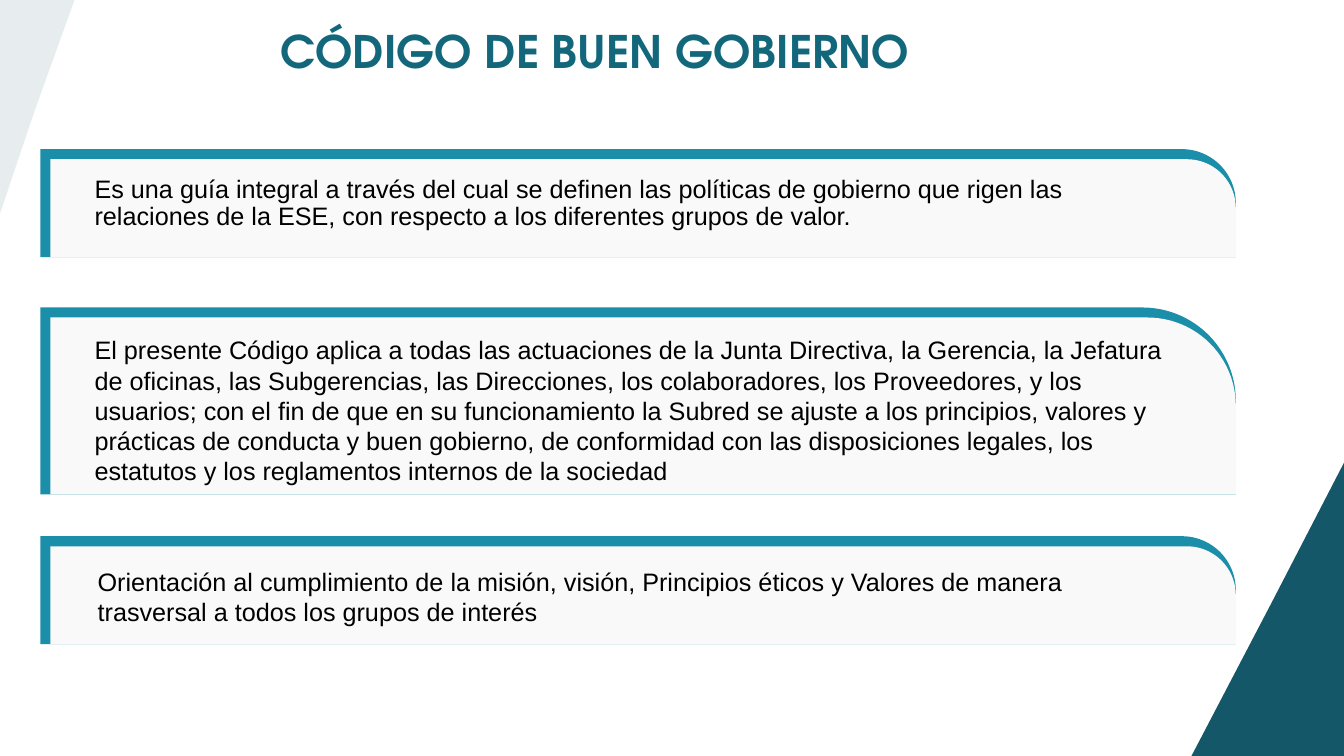
from lxml.etree import SubElement
from pptx import Presentation
from pptx.dml.color import RGBColor
from pptx.enum.shapes import MSO_SHAPE
from pptx.enum.text import MSO_ANCHOR, MSO_AUTO_SIZE, PP_ALIGN
from pptx.oxml.ns import qn
from pptx.util import Inches, Pt

COLORS = {
    "title": "13677B",
    "accent": "1B8EA9",
    "panel": "F9F9F9",
    "wedge": "145768",
    "text": "000000",
}

GUIDE = (
    "Es una guía integral a través del cual se definen las políticas de gobierno "
    "que rigen las relaciones de la ESE, con respecto a los diferentes grupos de valor."
)
SCOPE = (
    "El presente Código aplica a todas las actuaciones de la Junta Directiva, la Gerencia, "
    "la Jefatura de oficinas, las Subgerencias, las Direcciones, los colaboradores, "
    "los Proveedores, y los usuarios; con el fin de que en su funcionamiento la Subred "
    "se ajuste a los principios, valores y prácticas de conducta y buen gobierno, "
    "de conformidad con las disposiciones legales, los estatutos y los reglamentos "
    "internos de la sociedad"
)
ORIENTATION = (
    "Orientación al cumplimiento de la misión, visión, Principios éticos y Valores "
    "de manera trasversal a todos los grupos de interés"
)


class SlideBuilder:
    heading_font = "TeX Gyre Adventor"
    body_font = "Arial"
    card_left, card_width = 3, 88.95
    border_columns, border_rows = 0.75, 1.33

    def __init__(self, deck):
        self.column = deck.slide_width / 100
        self.row = deck.slide_height / 100
        self.page = deck.slides.add_slide(deck.slide_layouts[5])

    def area(self, left, top, width, height):
        return (
            round(left * self.column),
            round(top * self.row),
            round(width * self.column),
            round(height * self.row),
        )

    def paint(self, shape, color):
        shape.shadow.inherit = False
        shape.fill.solid()
        shape.fill.fore_color.rgb = RGBColor.from_string(COLORS[color])
        shape.line.fill.background()

    def wedge(self, points, opacity=100):
        corners = [(x * self.column, y * self.row) for x, y in points]
        builder = self.page.shapes.build_freeform(*corners[0])
        builder.add_line_segments(corners[1:], close=True)
        shape = builder.convert_to_shape()
        self.paint(shape, "wedge")
        if opacity < 100:
            color = shape._element.spPr.find(qn("a:solidFill"))[0]
            SubElement(color, qn("a:alpha"), val=str(opacity * 1000))

    def panel(self, area, color):
        shape = self.page.shapes.add_shape(MSO_SHAPE.ROUND_1_RECTANGLE, *self.area(*area))
        shape.adjustments[0] = 0.5
        self.paint(shape, color)

    def card(self, top, height):
        self.panel((self.card_left, top, self.card_width, height), "accent")
        self.panel(
            (
                self.card_left + self.border_columns,
                top + self.border_rows,
                self.card_width - self.border_columns,
                height - self.border_rows,
            ),
            "panel",
        )

    def set_text(self, box, text, font, size, color, bold=False, spacing=1.0):
        frame = box.text_frame
        frame.text = text
        frame.word_wrap = True
        frame.auto_size = MSO_AUTO_SIZE.NONE
        frame.vertical_anchor = MSO_ANCHOR.TOP
        para = frame.paragraphs[0]
        para.alignment = PP_ALIGN.LEFT
        para.line_spacing = spacing
        para.space_before = Pt(0)
        for span in para.runs:
            span.font.name = font
            span.font.size = Pt(size)
            span.font.bold = bold
            span.font.color.rgb = RGBColor.from_string(COLORS[color])

    def title(self, area, text):
        box = self.page.shapes.title
        box.left, box.top, box.width, box.height = self.area(*area)
        self.set_text(box, text, self.heading_font, 32, "title", bold=True)

    def body(self, area, text, spacing):
        box = self.page.shapes.add_textbox(*self.area(*area))
        self.set_text(box, text, self.body_font, 18, "text", spacing=spacing)


def main():
    deck = Presentation()
    deck.slide_width, deck.slide_height = Inches(13.33), Inches(7.5)
    slide = SlideBuilder(deck)

    slide.wedge([(94.65, 79.6), (100, 61.2), (100, 100), (88.65, 100)])
    slide.wedge([(2.55, 14.8), (-0.08, 28.67), (-0.08, -0.4), (5.63, -0.4)], opacity=10)
    slide.title((20.1, 2.53, 58.35, 8.53), "CÓDIGO DE BUEN GOBIERNO")

    cards = [
        (19.73, 14.27, (6.3, 22.67, 77.55, 14.27), GUIDE, 0.9),
        (40.67, 24.73, (6.3, 43.6, 82.05, 25.6), SCOPE, 1.0),
        (70.93, 14.27, (6.53, 74.27, 81.83, 9.47), ORIENTATION, 1.0),
    ]
    for top, height, text_area, text, spacing in cards:
        slide.card(top, height)
        slide.body(text_area, text, spacing)

    deck.save("out.pptx")


if __name__ == "__main__":
    main()
